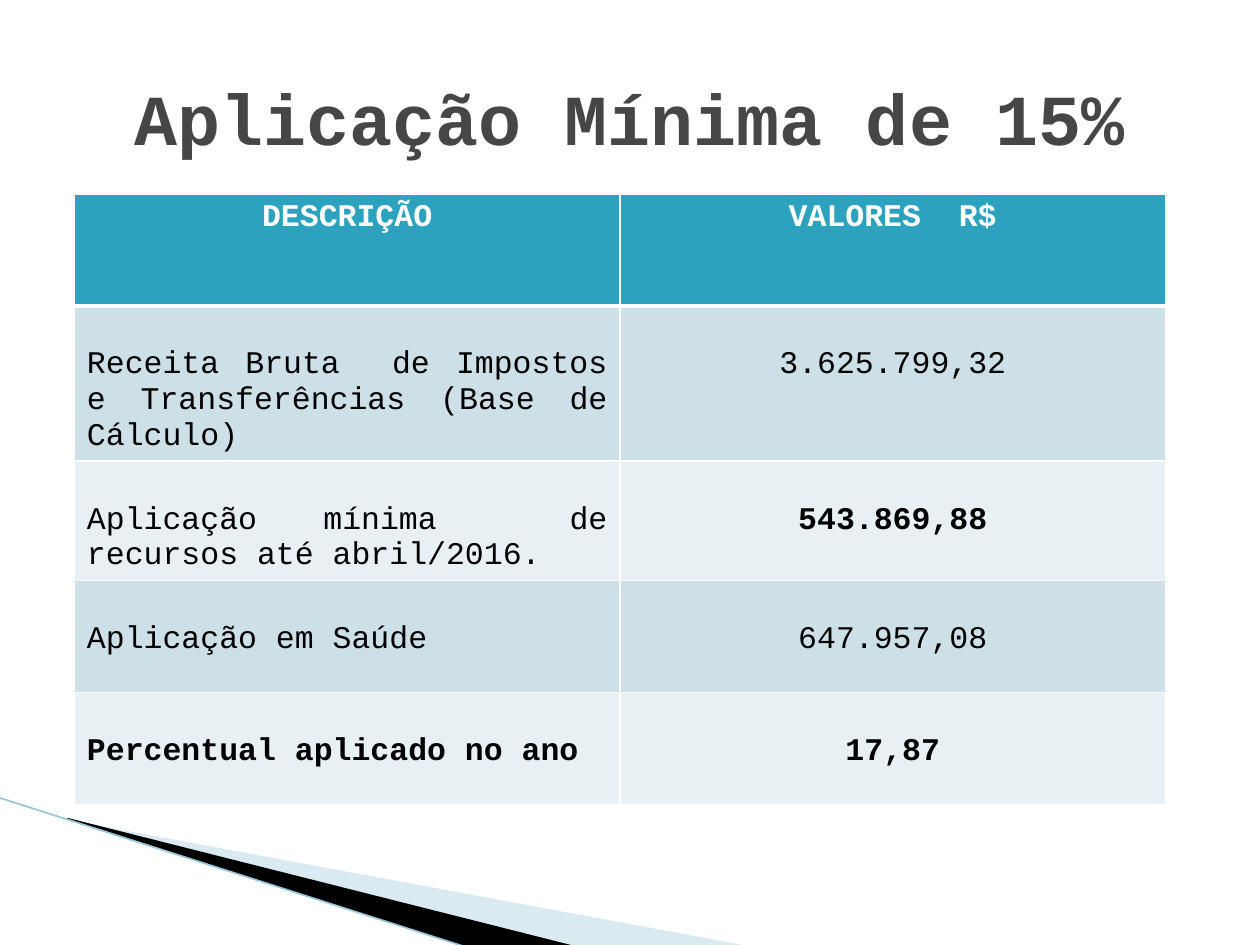
from lxml import etree
from pptx import Presentation
from pptx.dml.color import RGBColor
from pptx.enum import text
from pptx.oxml import ns
from pptx.util import Inches, Pt

FONT = "Courier New"
COLORS = {
    "title": "464646", "header": "2DA2BF", "odd": "CDE0E8", "even": "E8F0F4",
    "white": "FFFFFF", "black": "000000", "pale": "A0CBDC", "edge": "97C5D8",
}
HEADER = ("DESCRIÇÃO", "VALORES  R$")
# description, value, description is bold, value is bold
ROWS = [
    ("Receita Bruta  de Impostos e Transferências (Base de Cálculo)",
     "3.625.799,32", False, False),
    ("Aplicação mínima  de recursos até abril/2016.", "543.869,88", False, True),
    ("Aplicação em Saúde", "647.957,08", False, False),
    ("Percentual aplicado no ano", "17,87", True, True),
]


def rgb(name):
    return RGBColor.from_string(COLORS[name])


def add_element(parent, tag, **attributes):
    return etree.SubElement(parent, ns.qn(tag), attributes)


def write(frame, words, color, size, bold, align):
    paragraph = frame.paragraphs[0]
    paragraph.text = words
    paragraph.alignment = align
    for name, value in {"name": FONT, "size": Pt(size), "bold": bold}.items():
        setattr(paragraph.font, name, value)
    paragraph.font.color.rgb = rgb(color)


def add_title(slide, words):
    title = slide.shapes.title
    box = {"left": 0.5, "top": 0.3, "width": 9, "height": 1.25}
    for name, value in box.items():
        setattr(title, name, Inches(value))
    title.text_frame.vertical_anchor = text.MSO_ANCHOR.MIDDLE
    write(title.text_frame, words, "title", 41, True, text.PP_ALIGN.CENTER)


def add_wedge(slide, points, color, opacity=100):
    """Draw a filled outline through points given in hundredths of an inch."""
    builder = slide.shapes.build_freeform(*points[0], scale=Inches(0.01))
    builder.add_line_segments(points[1:], close=True)
    wedge = builder.convert_to_shape()
    wedge.shadow.inherit = False
    wedge.line.fill.background()
    wedge.fill.solid()
    wedge.fill.fore_color.rgb = rgb(color)
    if opacity < 100:
        fill_color = wedge.fill._xPr.find(".//" + ns.qn("a:srgbClr"))
        add_element(fill_color, "a:alpha", val=str(opacity * 1000))


def add_edge(slide, start, end):
    edge = slide.shapes.add_connector(1, *map(Inches, start + end))
    edge.line.color.rgb = rgb("edge")
    edge.line.width = Pt(0.95)
    add_element(edge._element.spPr, "a:effectLst")


def set_borders(cell, widths):
    properties = cell._tc.get_or_add_tcPr()
    for side, width in widths.items():
        line = add_element(properties, f"a:ln{side}", w=str(Pt(width)))
        fill = add_element(line, "a:solidFill")
        add_element(fill, "a:srgbClr", val=COLORS["white"])


def fill_cell(cell, fill, row, *text_format):
    set_borders(cell, {"L": 1, "R": 1, "T": 3 if row == 1 else 1,
                       "B": 3 if row == 0 else 1})
    cell.fill.solid()
    cell.fill.fore_color.rgb = rgb(fill)
    if row > 0:
        cell.margin_top = Inches(0.33)
    write(cell.text_frame, *text_format)


def add_values_table(slide):
    row_height = 0.89
    count = len(ROWS) + 1
    table = slide.shapes.add_table(
        count, 2, Inches(0.59), Inches(1.54), Inches(8.66),
        Inches(row_height * count)).table
    for row in table.rows:
        row.height = Inches(row_height)
    center, justify = text.PP_ALIGN.CENTER, text.PP_ALIGN.JUSTIFY
    for column, words in enumerate(HEADER):
        fill_cell(table.cell(0, column), "header", 0,
                  words, "white", 18, True, center)
    for row, (description, value, *bolds) in enumerate(ROWS, start=1):
        fill = "odd" if row % 2 else "even"
        fill_cell(table.cell(row, 0), fill, row,
                  description, "black", 18, bolds[0], justify)
        fill_cell(table.cell(row, 1), fill, row,
                  value, "black", 18, bolds[1], center)


def main():
    presentation = Presentation()
    presentation.slide_width = Inches(10)
    presentation.slide_height = Inches(7.5)
    slide = presentation.slides.add_slide(presentation.slide_layouts[5])
    add_wedge(slide, [(55, 651), (595, 751), (456, 751), (55, 650)], "pale", 40)
    add_wedge(slide, [(53, 649), (457, 751), (372, 752), (54, 650)], "black")
    add_edge(slide, (-0.01, 6.33), (3.71, 7.52))
    add_title(slide, "Aplicação Mínima de 15%")
    add_values_table(slide)
    presentation.save("out.pptx")


if __name__ == "__main__":
    main()
